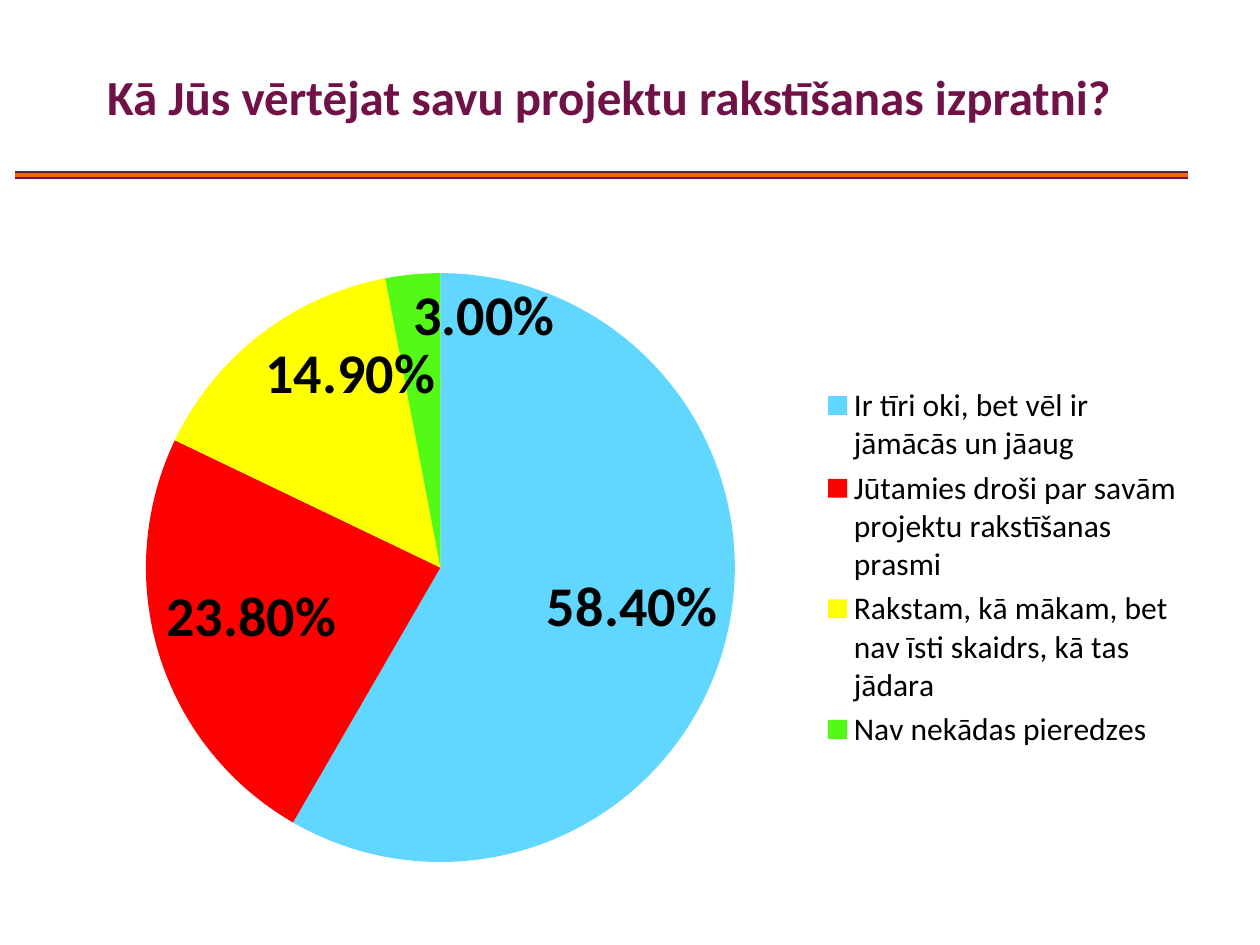
from dataclasses import dataclass

from lxml.etree import SubElement
from pptx import Presentation
from pptx.chart.data import CategoryChartData
from pptx.dml.color import RGBColor
from pptx.enum.chart import XL_CHART_TYPE, XL_LABEL_POSITION, XL_LEGEND_POSITION
from pptx.enum.shapes import MSO_CONNECTOR
from pptx.enum.text import MSO_ANCHOR, MSO_AUTO_SIZE, PP_ALIGN
from pptx.oxml.ns import qn
from pptx.util import Inches, Pt


@dataclass(frozen=True)
class Theme:
    font: str = "Calibri"
    plum: str = "701248"
    orange: str = "FC6410"
    text: str = "000000"
    slices: tuple = ("61D6FF", "FF0000", "FFFF00", "52FA16")
    title_size: int = 28
    legend_size: int = 18
    label_size: int = 32


@dataclass(frozen=True)
class Box:
    left: float
    top: float
    width: float
    height: float

    def lengths(self):
        return [Inches(value) for value in (self.left, self.top, self.width, self.height)]


THEME = Theme()
ANSWERS = {
    "Ir tīri oki, bet vēl ir jāmācās un jāaug": 0.584,
    "Jūtamies droši par savām projektu rakstīšanas prasmi": 0.238,
    "Rakstam, kā mākam, bet nav īsti skaidrs, kā tas jādara": 0.149,
    "Nav nekādas pieredzes": 0.03,
}


def format_font(font, size, color, bold=False):
    font.name = THEME.font
    font.size = Pt(size)
    font.bold = bold
    font.color.rgb = RGBColor.from_string(color)


def write_text(text_frame, text, size, color, bold=False, alignment=PP_ALIGN.LEFT):
    paragraph = text_frame.paragraphs[0]
    paragraph.alignment = alignment
    run = paragraph.add_run()
    run.text = text
    format_font(run.font, size, color, bold)


def add_rule(slide, box, color, weight):
    left, top, width, height = box.lengths()
    rule = slide.shapes.add_connector(
        MSO_CONNECTOR.STRAIGHT, left, top, left + width, top + height
    )
    rule.line.color.rgb = RGBColor.from_string(color)
    rule.line.width = Pt(weight)
    SubElement(rule.element.spPr, qn("a:effectLst"))


def place_title(slide, box, text):
    title = slide.shapes.title
    title.left, title.top, title.width, title.height = box.lengths()
    text_frame = title.text_frame
    text_frame.word_wrap = True
    text_frame.auto_size = MSO_AUTO_SIZE.NONE
    text_frame.vertical_anchor = MSO_ANCHOR.MIDDLE
    write_text(text_frame, text, size=THEME.title_size, color=THEME.plum, bold=True)


def place_divider(slide, box):
    for color, weight in ((THEME.plum, 4.5), (THEME.orange, 2.25)):
        add_rule(slide, box, color, weight)


def place_pie(slide, box, answers):
    chart_data = CategoryChartData(number_format="0.00%")
    chart_data.categories = list(answers)
    chart_data.add_series("Series 1", list(answers.values()))
    chart = slide.shapes.add_chart(XL_CHART_TYPE.PIE, *box.lengths(), chart_data).chart
    chart.has_title = False
    format_font(chart.font, THEME.legend_size, THEME.text)

    chart.has_legend = True
    chart.legend.position = XL_LEGEND_POSITION.RIGHT
    chart.legend.include_in_layout = False

    plot = chart.plots[0]
    plot.vary_by_categories = True
    for index, color in enumerate(THEME.slices):
        fill = plot.series[0].points[index].format.fill
        fill.solid()
        fill.fore_color.rgb = RGBColor.from_string(color)

    plot.has_data_labels = True
    labels = plot.data_labels
    labels.show_value = True
    labels.show_percentage = False
    labels.number_format = "0.00%"
    labels.number_format_is_linked = False
    labels.position = XL_LABEL_POSITION.INSIDE_END
    format_font(labels.font, THEME.label_size, THEME.text, bold=True)


def build_survey_slide(presentation):
    slide = presentation.slides.add_slide(presentation.slide_layouts[5])
    place_divider(slide, Box(0.12, 1.39, 9.31, 0))
    place_title(
        slide,
        Box(0.75, 0.13, 8.68, 1.26),
        "Kā Jūs vērtējat savu projektu rakstīšanas izpratni?",
    )
    place_pie(slide, Box(0.5, 2.03, 9, 4.95), ANSWERS)


def main():
    presentation = Presentation()
    presentation.slide_width = Inches(10)
    presentation.slide_height = Inches(7.5)
    build_survey_slide(presentation)
    presentation.save("out.pptx")


if __name__ == "__main__":
    main()
